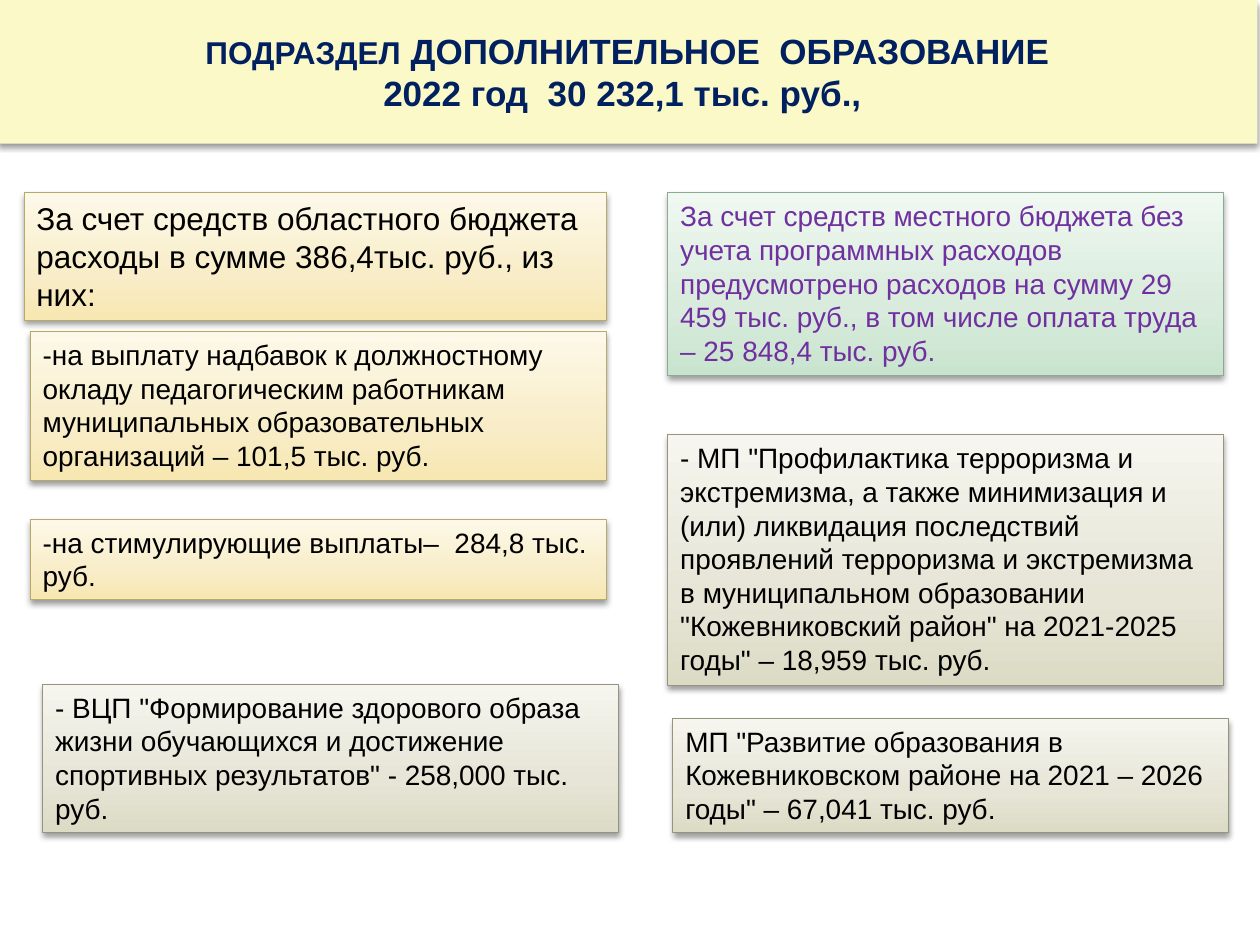
from copy import deepcopy

from lxml.etree import SubElement
from pptx import Presentation
from pptx.dml.color import RGBColor as Rgb
from pptx.enum.shapes import MSO_SHAPE as Kind
from pptx.enum.text import MSO_ANCHOR as Anchor, PP_ALIGN as Align
from pptx.oxml.ns import qn
from pptx.util import Inches, Pt

FONT = "Arial"
BLACK = Rgb(0x00, 0x00, 0x00)
NAVY = Rgb(0x00, 0x20, 0x60)
PURPLE = Rgb(0x70, 0x30, 0xA0)
CREAM = Rgb(0xFC, 0xF9, 0xC8)

# Each tone: outline, then the gradient from bottom to top
GOLD = (Rgb(0xB7, 0xA8, 0x6B), Rgb(0xF7, 0xE7, 0xB1),
        Rgb(0xF8, 0xED, 0xC8), Rgb(0xFD, 0xF9, 0xE9))
GREEN = (Rgb(0x8C, 0xA9, 0x93), Rgb(0xC8, 0xE4, 0xCE),
         Rgb(0xD8, 0xEB, 0xDC), Rgb(0xEF, 0xF8, 0xF1))
OLIVE = (Rgb(0x96, 0x95, 0x7C), Rgb(0xDC, 0xDB, 0xC5),
         Rgb(0xE6, 0xE5, 0xD6), Rgb(0xF6, 0xF5, 0xEF))
STOPS = (0, 0.35, 1)

# Cards: top, height, left shift, text size, text colour, tone, text
LEFT = [
    (1.53, 1.01, -0.05, 18, BLACK, GOLD,
     "За счет средств областного бюджета расходы в сумме 386,4тыс. руб., из них:"),
    (2.63, 1.18, 0, 16, BLACK, GOLD,
     "-на выплату надбавок к должностному окладу педагогическим работникам "
     "муниципальных образовательных организаций – 101,5 тыс. руб."),
    (4.12, 0.64, 0, 16, BLACK, GOLD,
     "-на стимулирующие выплаты–  284,8 тыс. руб."),
    (5.43, 1.18, 0.1, 16, BLACK, OLIVE,
     '- ВЦП "Формирование здорового образа жизни обучающихся и достижение '
     'спортивных результатов" - 258,000 тыс. руб.'),
]
RIGHT = [
    (1.53, 1.45, 0, 16, PURPLE, GREEN,
     "За счет средств местного бюджета без учета программных расходов "
     "предусмотрено расходов на сумму 29 459 тыс. руб., в том числе "
     "оплата труда – 25 848,4 тыс. руб."),
    (3.45, 1.99, 0, 16, BLACK, OLIVE,
     '- МП "Профилактика терроризма и экстремизма, а также минимизация и '
     '(или) ликвидация последствий проявлений терроризма и экстремизма в '
     'муниципальном образовании "Кожевниковский район" на 2021-2025 годы" '
     '– 18,959 тыс. руб.'),
    (5.7, 0.91, 0.04, 16, BLACK, OLIVE,
     'МП "Развитие образования в Кожевниковском районе на 2021 – 2026 годы" '
     '– 67,041 тыс. руб.'),
]


def add_rect(slide, x, y, w, h, blur):
    """Rectangle with a soft shadow below it."""
    rect = slide.shapes.add_shape(
        Kind.RECTANGLE, Inches(x), Inches(y), Inches(w), Inches(h))
    rect.shadow.inherit = False
    glow = SubElement(rect._element.spPr.find(qn("a:effectLst")),
                      qn("a:outerShdw"), blurRad=str(Pt(blur)),
                      dist=str(Pt(2)), dir="5400000", rotWithShape="0")
    tint = SubElement(glow, qn("a:srgbClr"), val="000000")
    SubElement(tint, qn("a:alpha"), val="38000")
    rect.text_frame.word_wrap = True
    return rect


def style(run, size, color, bold=False):
    font = run.font
    font.name, font.size, font.bold = FONT, Pt(size), bold
    font.color.rgb = color


def shade(rect, tones):
    """Vertical gradient, darkest at the bottom."""
    fill = rect.fill
    fill.gradient()
    fill.gradient_angle = 90
    first = rect._element.spPr.find(".//" + qn("a:gs"))
    first.addnext(deepcopy(first))
    for stop, place, tone in zip(fill.gradient_stops, STOPS, tones):
        stop.position = place
        stop.color.rgb = tone


def add_title(slide, x, y, w, h):
    band = add_rect(slide, x, y, w, h, 3.1)
    band.fill.solid()
    band.fill.fore_color.rgb = CREAM
    band.line.fill.background()
    frame = band.text_frame
    frame.vertical_anchor = Anchor.MIDDLE
    para = frame.paragraphs[0]
    para.alignment = Align.CENTER
    para.text = "ПОДРАЗДЕЛ"
    para.add_run().text = " ДОПОЛНИТЕЛЬНОЕ  ОБРАЗОВАНИЕ"
    para.add_line_break()
    para.add_run().text = "2022 год  30 232,1 тыс. руб., "
    for run, size in zip(para.runs, (18, 20, 20)):
        style(run, size, NAVY, True)


def add_cards(slide, x, w, cards):
    """Column of cards that share a right edge unless shifted."""
    for top, high, shift, size, color, (edge, *tones), text in cards:
        wide = w - min(shift, 0)
        card = add_rect(slide, x + shift, top, wide, high, 3.5)
        shade(card, tones)
        card.line.color.rgb = edge
        card.line.width = Pt(0.5)
        frame = card.text_frame
        frame.vertical_anchor = Anchor.TOP
        frame.text = text
        para = frame.paragraphs[0]
        para.alignment = Align.LEFT
        style(para.runs[0], size, color)


def main():
    deck = Presentation()
    deck.slide_width, deck.slide_height = Inches(10), Inches(7.5)
    slide = deck.slides.add_slide(deck.slide_layouts[6])
    add_title(slide, -0.02, 0, 10, 1.14)
    add_cards(slide, 0.24, 4.57, LEFT)
    add_cards(slide, 5.3, 4.41, RIGHT)
    deck.save("out.pptx")


if __name__ == "__main__":
    main()
